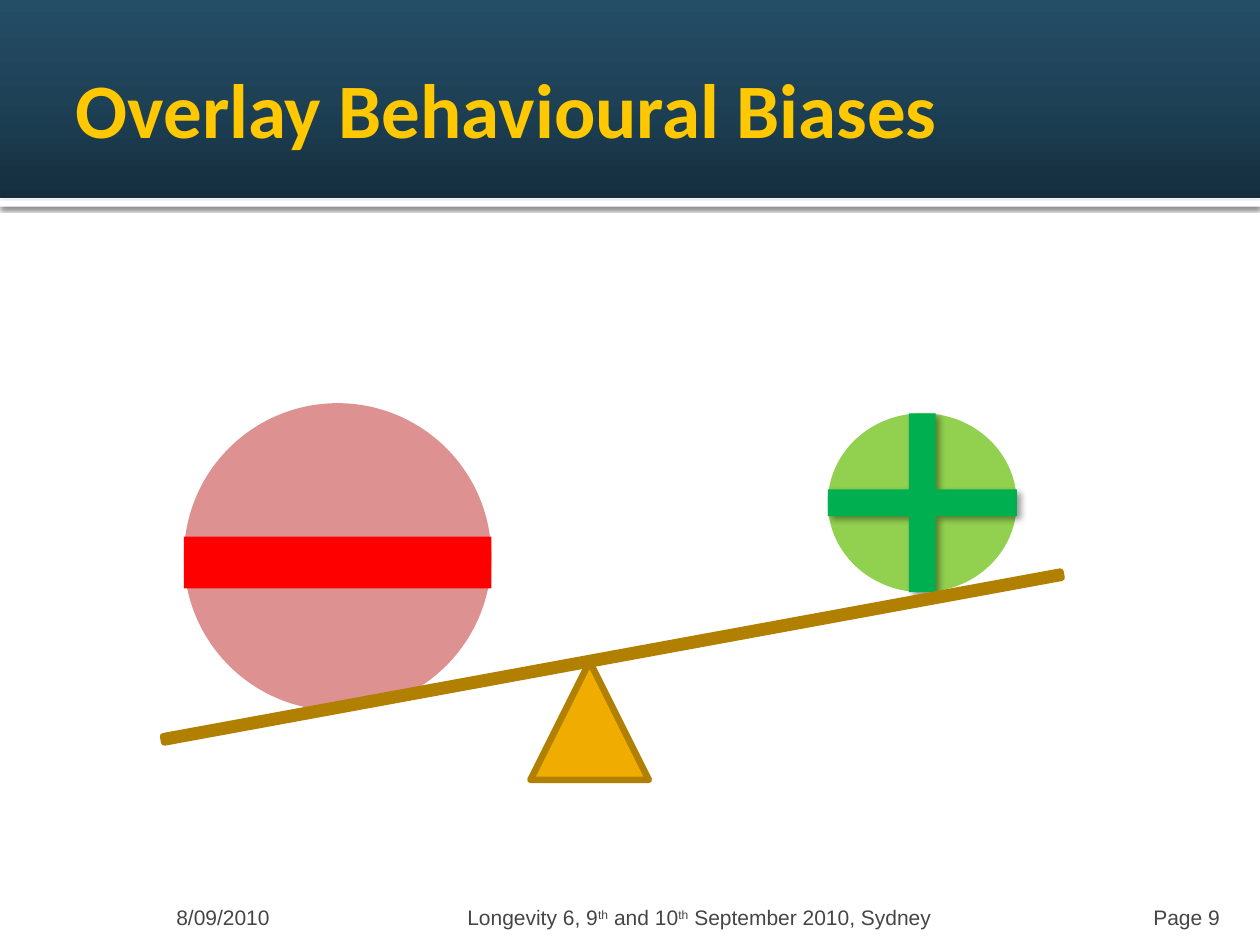
from copy import deepcopy
from dataclasses import dataclass
from lxml.etree import SubElement
from pptx import Presentation
from pptx.dml.color import RGBColor
from pptx.enum.shapes import MSO_SHAPE as SHAPE
from pptx.enum.text import MSO_ANCHOR as ANCHOR, PP_ALIGN as ALIGN
from pptx.oxml.ns import qn
from pptx.util import Inches, Pt


@dataclass(frozen=True)
class Theme:
    white: str = "FFFFFF"
    black: str = "000000"
    band: tuple = ((0, "152E3D"), (50, "1E4156"), (100, "244D66"))
    title: str = "FFC800"
    footer: str = "454545"
    loss: str = "DD9191"
    minus: str = "FF0000"
    gain: str = "92D050"
    plus: str = "00B050"
    wood: str = "F0AD00"
    edge: str = "B28000"
    edge_width: float = 3.78
    title_font: str = "Calibri"
    footer_font: str = "Arial"
    title_size: int = 44
    footer_size: int = 12


THEME = Theme()


def rgb(color):
    return RGBColor.from_string(color)


def set_attrs(obj, values):
    for name, value in values.items():
        setattr(obj, name, value)


def place(sp, box):
    set_attrs(sp, dict(zip(("left", "top", "width", "height"), map(Inches, box))))


def add_shape(shapes, kind, box, fill=None, edge=None, rotation=0):
    sp = shapes.add_shape(kind, *map(Inches, box))
    sp.shadow.inherit = False
    sp.rotation = rotation
    if fill:
        sp.fill.solid()
        sp.fill.fore_color.rgb = rgb(fill)
    if edge:
        sp.line.color.rgb = rgb(edge)
        sp.line.width = Pt(THEME.edge_width)
        SubElement(sp.line._ln, qn("a:round"))
    else:
        sp.line.fill.background()
    return sp


def add_shadow(sp, alpha, blur, dist, angle):
    effects = sp._element.spPr.find(qn("a:effectLst"))
    shadow = SubElement(effects, qn("a:outerShdw"), blurRad=str(Pt(blur)),
                        dist=str(Pt(dist)), dir=str(angle * 60000),
                        algn="tl", rotWithShape="0")
    color = SubElement(shadow, qn("a:srgbClr"), val=THEME.black)
    SubElement(color, qn("a:alpha"), val=str(alpha * 1000))


def fill_gradient(sp, stops, angle):
    sp.fill.gradient()
    sp.fill.gradient_angle = angle
    gs_list = next(sp._element.spPr.iter(qn("a:gsLst")))
    gs_list.insert(1, deepcopy(gs_list[0]))
    for stop, (position, color) in zip(sp.fill.gradient_stops, stops):
        stop.position = position / 100
        stop.color.rgb = rgb(color)


def format_frame(tf, anchor, insets):
    sides = ("margin_left", "margin_top", "margin_right", "margin_bottom")
    set_attrs(tf, dict(zip(sides, map(Inches, insets)),
                       word_wrap=True, vertical_anchor=anchor))


def format_font(font, name, size, color, bold=False):
    set_attrs(font, {"name": name, "size": Pt(size), "bold": bold})
    font.color.rgb = rgb(color)


def add_header(slide):
    strip = add_shape(slide.shapes, SHAPE.RECTANGLE, (0, 1.59, 10, 0.05), THEME.white)
    add_shadow(strip, 60, 2.5, 0.8, 90)
    band = add_shape(slide.shapes, SHAPE.RECTANGLE, (0, 0, 10, 1.57))
    fill_gradient(band, THEME.band, 90)


def add_title(slide, text):
    title = slide.shapes.title
    place(title, (0.5, 0.17, 9, 1.37))
    tf = title.text_frame
    format_frame(tf, ANCHOR.MIDDLE, (0.1, 0.05, 0.05, 0.05))
    p = tf.paragraphs[0]
    p.alignment = ALIGN.LEFT
    r = p.add_run()
    r.text = text
    format_font(r.font, THEME.title_font, THEME.title_size, THEME.title, True)
    slide.shapes._spTree.append(title._element)


def add_footer(slide, left, width, align, insets, runs):
    box = slide.shapes.add_textbox(*map(Inches, (left, 7.08, width, 0.3)))
    tf = box.text_frame
    format_frame(tf, ANCHOR.BOTTOM, insets)
    p = tf.paragraphs[0]
    p.alignment = align
    for text in runs:
        r = p.add_run()
        r.text = text
        format_font(r.font, THEME.footer_font, THEME.footer_size, THEME.footer)
        if text == "th":
            r.font._element.set("baseline", "30000")


def add_loss_ball(slide):
    shapes = slide.shapes.add_group_shape().shapes
    add_shape(shapes, SHAPE.OVAL, (1.46, 3.2, 2.44, 2.44), THEME.loss)
    add_shape(shapes, SHAPE.RECTANGLE, (1.46, 4.26, 2.44, 0.41), THEME.minus)


def add_gain_ball(slide):
    shapes = slide.shapes.add_group_shape().shapes
    box = (6.57, 3.28, 1.5, 1.42)
    add_shape(shapes, SHAPE.OVAL, box, THEME.gain)
    plus = add_shape(shapes, SHAPE.QUAD_ARROW, box, THEME.plus)
    for i, value in enumerate((0.225, 0.075, 0)):
        plus.adjustments[i] = value
    add_shadow(plus, 40, 4, 3, 45)


def add_seesaw(slide):
    add_shape(slide.shapes, SHAPE.ISOSCELES_TRIANGLE, (4.21, 5.25, 0.94, 0.94),
              THEME.wood, THEME.edge)
    add_shape(slide.shapes, SHAPE.RECTANGLE, (1.24, 5.19, 7.24, 0.05),
              THEME.wood, THEME.edge, 349.6)


def main():
    prs = Presentation()
    set_attrs(prs, {"slide_width": Inches(10), "slide_height": Inches(7.5)})
    slide = prs.slides.add_slide(prs.slide_layouts[5])
    add_header(slide)
    add_title(slide, "Overlay Behavioural Biases")
    add_footer(slide, 0.5, 1.69, ALIGN.RIGHT, (0.12, 0.05, 0.05, 0), ["8/09/2010"])
    add_footer(slide, 8.91, 0.87, ALIGN.RIGHT, (0.1, 0.05, 0.1, 0), ["Page 9"])
    add_footer(slide, 2.19, 6.72, ALIGN.CENTER, (0.05, 0.05, 0.05, 0),
               ["Longevity 6, 9", "th", " and 10", "th", " September 2010, Sydney"])
    add_loss_ball(slide)
    add_gain_ball(slide)
    add_seesaw(slide)
    prs.save("out.pptx")


if __name__ == "__main__":
    main()
